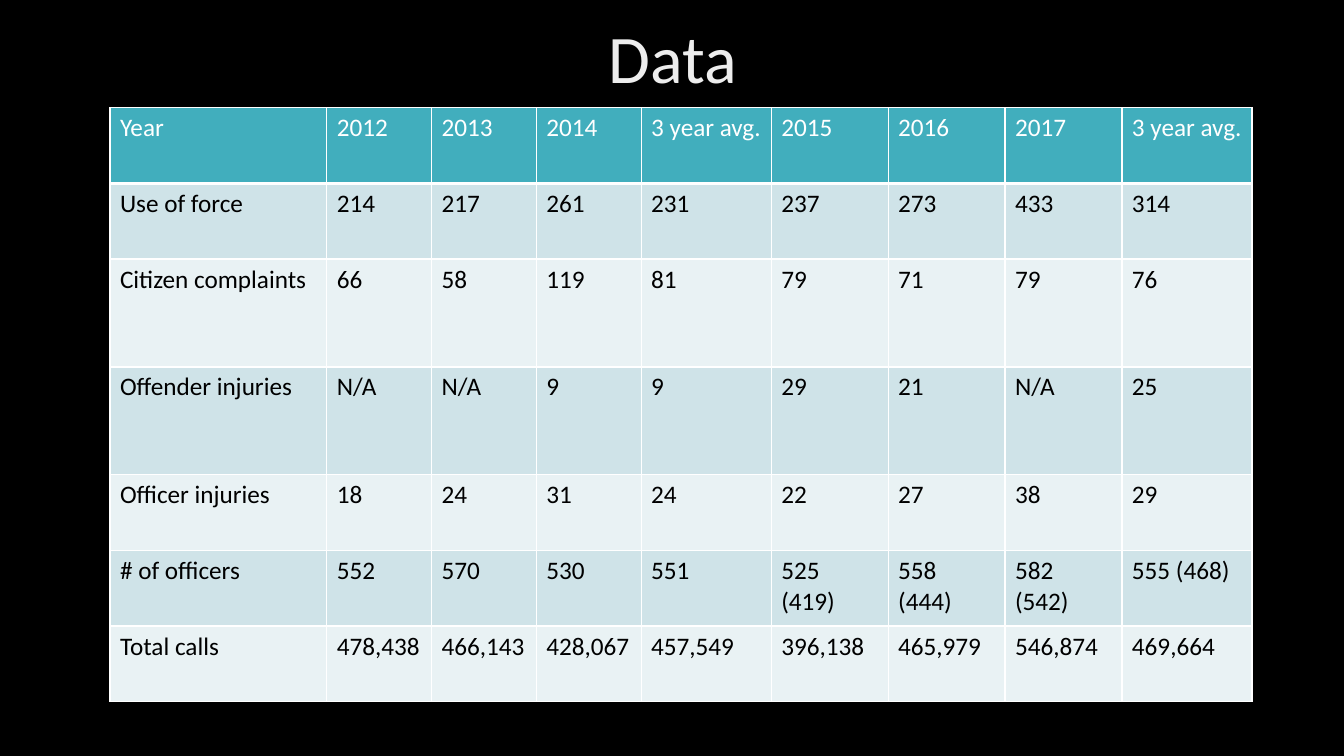
from dataclasses import dataclass

from pptx import Presentation
from pptx.dml.color import RGBColor
from pptx.enum.text import MSO_ANCHOR as Anchor, MSO_AUTO_SIZE as AutoSize, PP_ALIGN as Align
from pptx.oxml import parse_xml
from pptx.oxml.ns import nsdecls
from pptx.util import Inches, Pt

FONT = "Calibri"
BLACK, WHITE, TEAL = "000000", "FFFFFF", "41AEBD"
BANDS = ("CFE3E8", "E9F2F4")
TITLE_STOPS = ((0, "BFBFBF"), (28, "EDEDED"), (100, "FFFFFF"))

prs = Presentation()
prs.slide_width, prs.slide_height = Inches(13.33), Inches(7.5)


@dataclass(frozen=True)
class Row:
    label: str
    values: tuple[str, ...]
    height: float = 10  # percent of the slide height


ROWS = (
    Row("Year", ("2012", "2013", "2014", "3 year avg.", "2015", "2016", "2017", "3 year avg.")),
    Row("Use of force", ("214", "217", "261", "231", "237", "273", "433", "314")),
    Row("Citizen complaints", ("66", "58", "119", "81", "79", "71", "79", "76"), 14.27),
    Row("Offender injuries", ("N/A", "N/A", "9", "9", "29", "21", "N/A", "25"), 14.27),
    Row("Officer injuries", ("18", "24", "31", "24", "22", "27", "38", "29")),
    Row("# of officers", ("552", "570", "530", "551",
                          "525 (419)", "558 (444)", "582 (542)", "555 (468)")),
    Row("Total calls", ("478,438", "466,143", "428,067", "457,549",
                        "396,138", "465,979", "546,874", "469,664")),
)
LABEL, EARLY, LATE, AVERAGE = 16.13, 7.8, 8.7, 9.68  # percent of the slide width
COLUMNS = (LABEL, *[EARLY] * 3, AVERAGE, *[LATE] * 3, AVERAGE)


def across(percent: float) -> int:
    return round(prs.slide_width * percent / 100)


def down(percent: float) -> int:
    return round(prs.slide_height * percent / 100)


def rgb(color: str) -> RGBColor:
    return RGBColor.from_string(color)


def add_title(slide, text: str) -> None:
    sp = slide.shapes.title
    sp.left, sp.top, sp.width, sp.height = across(16.28), down(4), across(67.52), down(8.27)
    tf = sp.text_frame
    tf.auto_size, tf.vertical_anchor = AutoSize.NONE, Anchor.MIDDLE
    p = tf.paragraphs[0]
    p.alignment, p.line_spacing = Align.CENTER, 0.9
    p.font.name, p.font.size = FONT, Pt(48.6)
    r = p.add_run()
    r.text = text
    stops = "".join(f'<a:gs pos="{pos * 1000}"><a:srgbClr val="{color}"/></a:gs>'
                    for pos, color in TITLE_STOPS)
    r._r.get_or_add_rPr().insert(0, parse_xml(
        f'<a:gradFill {nsdecls("a")}><a:gsLst>{stops}</a:gsLst>'
        f'<a:lin ang="{80 * 60000}" scaled="0"/></a:gradFill>'))


def set_borders(cell, bottom: float) -> None:
    sides = (("lnL", 1), ("lnR", 1), ("lnT", 1), ("lnB", bottom))
    for i, (side, width) in enumerate(sides):
        cell._tc.get_or_add_tcPr().insert(i, parse_xml(
            f'<a:{side} {nsdecls("a")} w="{Pt(width)}"><a:solidFill>'
            f'<a:srgbClr val="{WHITE}"/></a:solidFill></a:{side}>'))


def fill_cell(cell, text: str, fill: str, color: str, bottom: float) -> None:
    cell.fill.solid()
    cell.fill.fore_color.rgb = rgb(fill)
    set_borders(cell, bottom)
    cell.text = text
    p = cell.text_frame.paragraphs[0]
    p.font.name, p.font.size, p.font.color.rgb = FONT, Pt(18), rgb(color)


def add_data_table(slide) -> None:
    frame = slide.shapes.add_table(
        len(ROWS), len(COLUMNS), across(8.18), down(14.27),
        across(sum(COLUMNS)), down(sum(row.height for row in ROWS)))
    table = frame.table
    table.first_row = table.horz_banding = False
    for column, width in zip(table.columns, COLUMNS):
        column.width = across(width)
    for i, row in enumerate(ROWS):
        table.rows[i].height = down(row.height)
        # Teal header, then alternating bands
        fill, color, bottom = (BANDS[(i - 1) % 2], BLACK, 1) if i else (TEAL, WHITE, 3)
        for j, text in enumerate((row.label, *row.values)):
            fill_cell(table.cell(i, j), text, fill, color, bottom)


# Slide with a title-only layout on black
slide = prs.slides.add_slide(prs.slide_layouts[5])
slide.background.fill.solid()
slide.background.fill.fore_color.rgb = rgb(BLACK)

add_title(slide, "Data")
add_data_table(slide)

prs.save("out.pptx")
